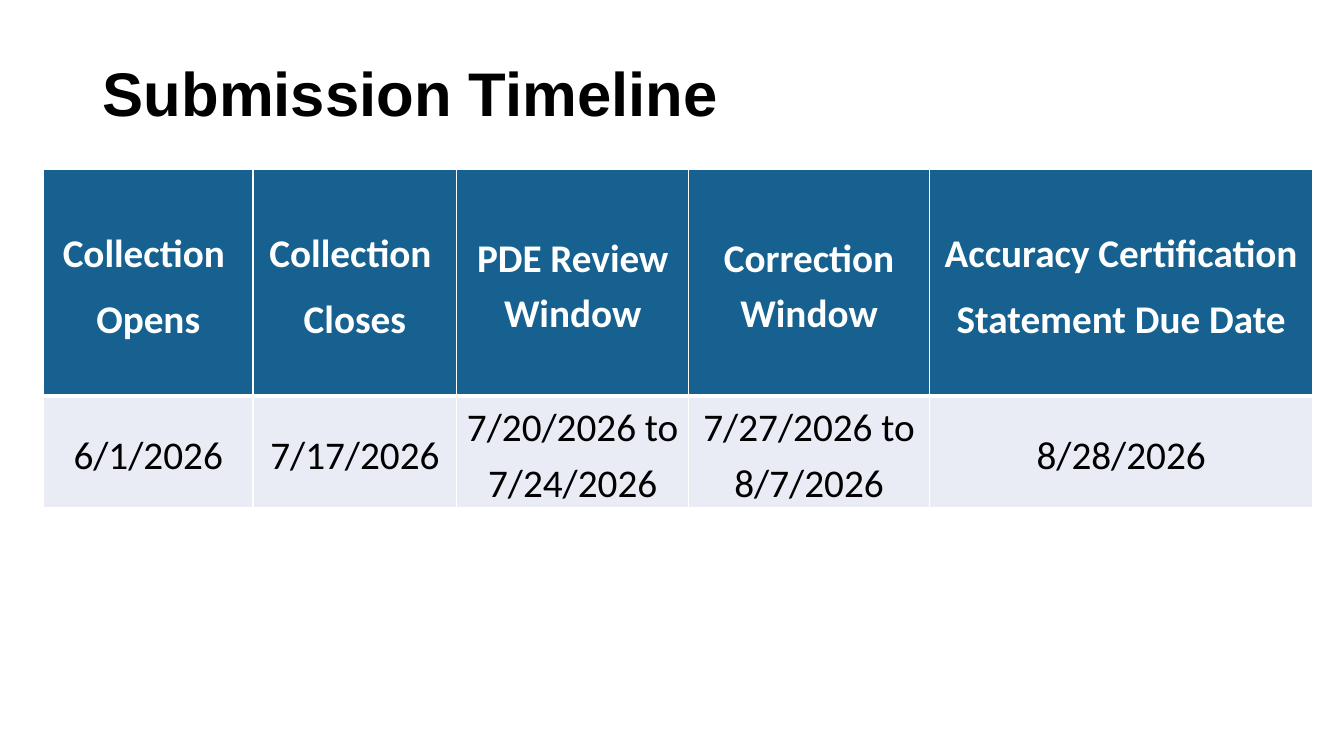
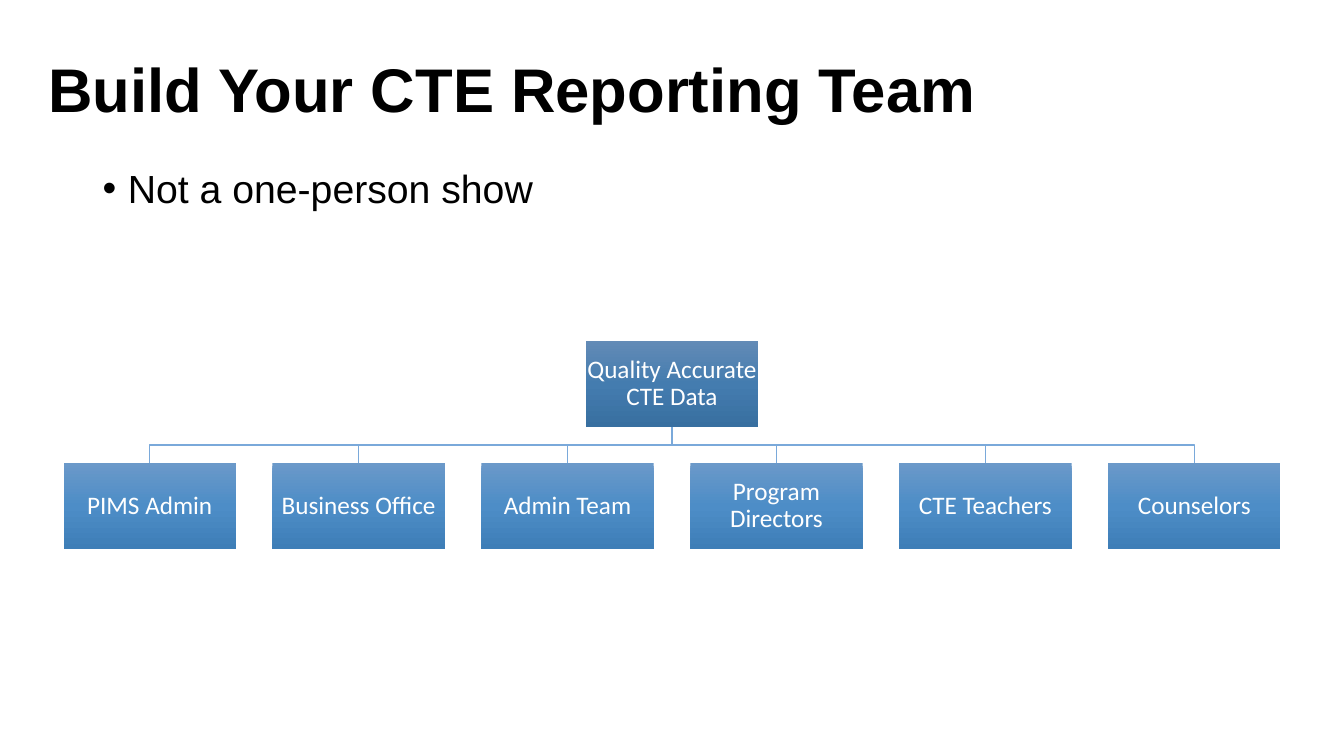
from copy import deepcopy

from lxml import etree
from pptx import Presentation
from pptx.dml.color import RGBColor
from pptx.enum.shapes import MSO_SHAPE
from pptx.enum.text import MSO_ANCHOR, MSO_AUTO_SIZE, PP_ALIGN
from pptx.oxml.ns import qn
from pptx.util import Inches, Pt

LEFT, CENTER = PP_ALIGN.LEFT, PP_ALIGN.CENTER
MIDDLE, TOP = MSO_ANCHOR.MIDDLE, MSO_ANCHOR.TOP
RECTANGLE = MSO_SHAPE.RECTANGLE
NO_AUTOFIT = MSO_AUTO_SIZE.NONE

BLACK = RGBColor(0x00, 0x00, 0x00)
WHITE = RGBColor(0xFF, 0xFF, 0xFF)
HEADER_BLUE = RGBColor(0x16, 0x61, 0x8F)
ROW_GRAY = RGBColor(0xE9, 0xEB, 0xF5)
LINE_BLUE = RGBColor(0x7A, 0xA9, 0xDA)
ROOT_GRADIENT = (RGBColor(0x63, 0x8B, 0xB6), RGBColor(0x44, 0x7C, 0xAF),
                 RGBColor(0x38, 0x6F, 0xA0))
MEMBER_GRADIENT = (RGBColor(0x6B, 0x99, 0xC9), RGBColor(0x4D, 0x8D, 0xC7),
                   RGBColor(0x3E, 0x7E, 0xB7))

TITLE_ONLY = 5
HEADING_FONT, BODY_FONT = "Arial", "Calibri"

TIMELINE = [
    ["Collection \nOpens", "Collection \nCloses", "PDE Review Window",
     "Correction Window", "Accuracy Certification\nStatement Due Date"],
    ["6/1/2026", "7/17/2026", "7/20/2026 to 7/24/2026",
     "7/27/2026 to 8/7/2026", "8/28/2026"],
]
COLUMN_WIDTHS = [2.08, 2.02, 2.3, 2.39, 3.8]
ROW_HEIGHTS = [2.25, 1.11]

TEAM_GOAL = "Quality Accurate CTE Data"
TEAM = ["PIMS Admin", "Business Office", "Admin Team", "Program Directors",
        "CTE Teachers", "Counselors"]


def write_text(frame, text, font=BODY_FONT, size=28, color=BLACK, bold=False,
               align=LEFT, line_spacing=1.0, space_after=0, bullet=None):
    """Write one paragraph for each line of text."""
    for index, line in enumerate(text.split("\n")):
        paragraph = frame.add_paragraph() if index else frame.paragraphs[0]
        if bullet:
            properties = paragraph._p.get_or_add_pPr()
            properties.set("marL", str(Inches(0.25)))
            properties.set("indent", str(-Inches(0.25)))
            etree.SubElement(properties, qn("a:buFont"), typeface=HEADING_FONT)
            etree.SubElement(properties, qn("a:buChar"), char=bullet)
        paragraph.alignment = align
        paragraph.line_spacing = line_spacing
        paragraph.space_before = Pt(0)
        paragraph.space_after = Pt(space_after)
        run = paragraph.add_run()
        run.text = line
        run.font.name = font
        run.font.size = Pt(size)
        run.font.bold = bold
        run.font.color.rgb = color


def add_titled_slide(presentation, title, left, top):
    slide = presentation.slides.add_slide(presentation.slide_layouts[TITLE_ONLY])
    shape = slide.shapes.title
    shape.left, shape.top = Inches(left), Inches(top)
    shape.width, shape.height = Inches(11.5), Inches(1.45)
    frame = shape.text_frame
    frame.word_wrap = True
    frame.auto_size = NO_AUTOFIT
    frame.vertical_anchor = MIDDLE
    write_text(frame, title, font=HEADING_FONT, size=44, bold=True,
               line_spacing=0.9)
    return slide


# Timeline table
def set_borders(cell, top=1, bottom=1):
    properties = cell._tc.get_or_add_tcPr()
    for side, width in (("L", 1), ("R", 1), ("T", top), ("B", bottom)):
        line = etree.SubElement(properties, qn(f"a:ln{side}"), w=str(Pt(width)))
        fill = etree.SubElement(line, qn("a:solidFill"))
        etree.SubElement(fill, qn("a:srgbClr"), val=str(WHITE))


def add_timeline_table(slide, left, top):
    frame = slide.shapes.add_table(
        len(ROW_HEIGHTS), len(COLUMN_WIDTHS), Inches(left), Inches(top),
        Inches(sum(COLUMN_WIDTHS)), Inches(sum(ROW_HEIGHTS)))
    table = frame.table
    table.horz_banding = False
    for column, width in zip(table.columns, COLUMN_WIDTHS):
        column.width = Inches(width)
    for row_index, (row, height) in enumerate(zip(table.rows, ROW_HEIGHTS)):
        row.height = Inches(height)
        header = row_index == 0
        for cell, text in zip(row.cells, TIMELINE[row_index]):
            set_borders(cell, top=1 if header else 3, bottom=3 if header else 1)
            cell.fill.solid()
            cell.fill.fore_color.rgb = HEADER_BLUE if header else ROW_GRAY
            cell.vertical_anchor = MIDDLE
            cell.margin_left = cell.margin_right = cell.margin_top = Inches(0.01)
            cell.margin_bottom = 0
            write_text(cell.text_frame, text, color=WHITE if header else BLACK,
                       bold=header, align=CENTER, line_spacing=1.15,
                       space_after=8)


# Team chart
def fill_gradient(shape, colors):
    fill = shape.fill
    fill.gradient()
    fill.gradient_angle = 270
    stop_list = shape._element.spPr.find(".//" + qn("a:gsLst"))
    while len(stop_list) < len(colors):
        stop_list.append(deepcopy(stop_list[0]))
    for index, (stop, color) in enumerate(zip(fill.gradient_stops, colors)):
        stop.position = index / (len(colors) - 1)
        stop.color.rgb = color


def add_team_box(slide, text, left, top, width, height, colors):
    shape = slide.shapes.add_shape(RECTANGLE, Inches(left), Inches(top),
                                   Inches(width), Inches(height))
    shape.shadow.inherit = False
    shape.line.fill.background()
    fill_gradient(shape, colors)
    frame = shape.text_frame
    frame.word_wrap = True
    frame.vertical_anchor = MIDDLE
    frame.margin_left = frame.margin_right = Inches(0.01)
    frame.margin_top = frame.margin_bottom = Inches(0.01)
    write_text(frame, text, size=18, color=WHITE, align=CENTER, line_spacing=0.9)


def add_branch(slide, start_x, start_y, end_x, end_y):
    middle_y = (start_y + end_y) / 2
    points = [(start_x, middle_y), (end_x, middle_y), (end_x, end_y)]
    builder = slide.shapes.build_freeform(Inches(start_x), Inches(start_y))
    builder.add_line_segments([(Inches(x), Inches(y)) for x, y in points],
                              close=False)
    branch = builder.convert_to_shape()
    branch.shadow.inherit = False
    branch.fill.background()
    branch.line.color.rgb = LINE_BLUE
    branch.line.width = Pt(1)


def add_team_chart(slide, left, top, width, height):
    box_width, box_height = 1.71, 0.86
    center_x = left + width / 2
    member_top = top + height - box_height
    step = (width - box_width) / (len(TEAM) - 1)
    member_lefts = [left + index * step for index in range(len(TEAM))]
    for member_left in member_lefts:
        add_branch(slide, center_x, top + box_height,
                   member_left + box_width / 2, member_top)
    add_team_box(slide, TEAM_GOAL, center_x - box_width / 2, top,
                 box_width, box_height, ROOT_GRADIENT)
    for name, member_left in zip(TEAM, member_lefts):
        add_team_box(slide, name, member_left, member_top,
                     box_width, box_height, MEMBER_GRADIENT)


def add_bullet_text(slide, text, left, top, width, height):
    box = slide.shapes.add_textbox(Inches(left), Inches(top),
                                   Inches(width), Inches(height))
    frame = box.text_frame
    frame.word_wrap = True
    frame.vertical_anchor = TOP
    write_text(frame, text, font=HEADING_FONT, bullet="•")


# Slides
def build_timeline_slide(presentation):
    slide = add_titled_slide(presentation, "Submission Timeline", 0.92, 0.23)
    add_timeline_table(slide, 0.43, 1.68)


def build_team_slide(presentation):
    slide = add_titled_slide(presentation, "Build Your CTE Reporting Team",
                             0.38, 0.19)
    add_bullet_text(slide, "Not a one-person show", 0.92, 1.58, 12.18, 0.95)
    add_team_chart(slide, 0.63, 3.38, 12.07, 2.07)


def main():
    presentation = Presentation()
    presentation.slide_width = Inches(13.33)
    presentation.slide_height = Inches(7.5)
    build_timeline_slide(presentation)
    build_team_slide(presentation)
    presentation.save("out.pptx")


if __name__ == "__main__":
    main()
